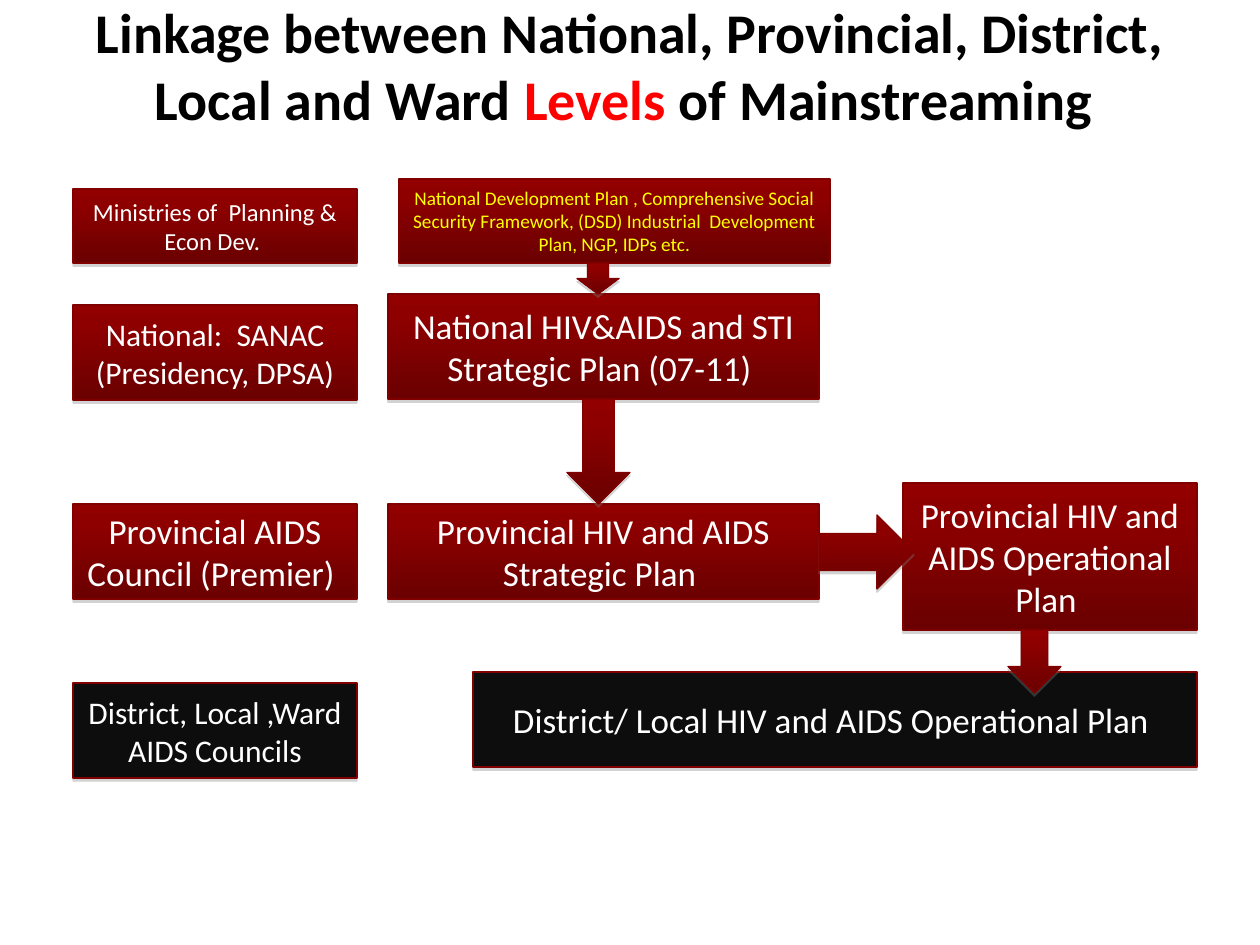
from copy import deepcopy

from lxml import etree
from pptx import Presentation
from pptx.dml.color import RGBColor
from pptx.enum.shapes import MSO_SHAPE
from pptx.enum.text import MSO_ANCHOR, MSO_AUTO_SIZE, PP_ALIGN
from pptx.oxml.ns import qn
from pptx.util import Pt

RECT, DOWN, RIGHT = MSO_SHAPE.RECTANGLE, MSO_SHAPE.DOWN_ARROW, MSO_SHAPE.RIGHT_ARROW
MIDDLE, CENTER = MSO_ANCHOR.MIDDLE, PP_ALIGN.CENTER
BLACK = RGBColor(0x00, 0x00, 0x00)
WHITE = RGBColor(0xFF, 0xFF, 0xFF)
RED = RGBColor(0xFF, 0x00, 0x00)
YELLOW = RGBColor(0xFF, 0xFF, 0x00)
CHARCOAL = RGBColor(0x0D, 0x0D, 0x0D)
MAROON = RGBColor(0x80, 0x00, 0x00)
GRADIENT = [(0, RGBColor(0x92, 0x00, 0x00)), (0.2, RGBColor(0x8E, 0x00, 0x00)),
            (1, RGBColor(0x6B, 0x00, 0x00))]
FONT = "Calibri"
PX = 914400 / 126


def px(*lengths):
    return [round(n * PX) for n in lengths]


def add_part(kind, box, solid=None):
    """Add a maroon-edged shape, with the red gradient unless solid is given."""
    sp = s.shapes.add_shape(kind, *px(*box))
    if solid is not None:
        sp.fill.solid()
        sp.fill.fore_color.rgb = solid
    else:
        sp.fill.gradient()
        sp.fill.gradient_angle = 270
        stops = sp._element.spPr.find(qn("a:gradFill")).find(qn("a:gsLst"))
        stops.insert(1, deepcopy(stops[0]))
        for stop, (position, color) in zip(sp.fill.gradient_stops, GRADIENT):
            stop.position = position
            stop.color.rgb = color
    sp.line.color.rgb = MAROON
    sp.line.width = Pt(0.75)

    # Thin grey shadow below
    sp.shadow.inherit = False
    effects = sp._element.spPr.find(qn("a:effectLst"))
    shadow = etree.SubElement(effects, qn("a:outerShdw"), blurRad="0", dist=str(Pt(1.8)),
                              dir="5400000", rotWithShape="0")
    grey = etree.SubElement(shadow, qn("a:srgbClr"), val="808080")
    etree.SubElement(grey, qn("a:alpha"), val="35000")
    return sp


prs = Presentation()
prs.slide_width, prs.slide_height = px(1260, 945)
s = prs.slides.add_slide(prs.slide_layouts[5])

# Title
title = s.shapes.title
title.left, title.top, title.width, title.height = px(63, 10, 1134, 110)
tf = title.text_frame
tf.word_wrap = True
tf.auto_size = MSO_AUTO_SIZE.NONE
tf.vertical_anchor = MIDDLE
p = tf.paragraphs[0]
p.alignment = CENTER
p.font.name, p.font.size, p.font.bold = FONT, Pt(32), True
for text, color in [
    ("Linkage between National, Provincial, District, Local and Ward ", BLACK),
    ("Levels", RED),
    (" of Mainstreaming ", BLACK),
]:
    r = p.add_run()
    r.text = text
    r.font.color.rgb = color

# Boxes: place, text, size, text colour, solid fill
COUNCIL_X, COUNCIL_W = 73, 284
PLAN_X, PLAN_W = 388, 431
boxes = [
    # Plans
    ((399, 179, PLAN_W, 84), "National Development Plan , Comprehensive Social Security Framework, "
     "(DSD) Industrial  Development Plan, NGP, IDPs etc.", 11, YELLOW, None),
    ((PLAN_X, 294, PLAN_W, 105), "National HIV&AIDS and STI Strategic Plan (07-11) ",
     20, WHITE, None),
    ((PLAN_X, 504, PLAN_W, 95), "Provincial HIV and AIDS Strategic Plan ", 20, WHITE, None),
    ((903, 483, 294, 147), "Provincial HIV and AIDS Operational Plan ", 20, WHITE, None),
    ((473, 672, 724, 95), "District/ Local HIV and AIDS Operational Plan ",
     20, WHITE, CHARCOAL),
    # Councils
    ((COUNCIL_X, 189, COUNCIL_W, 74), "Ministries of  Planning &\nEcon Dev. ", 14, WHITE, None),
    ((COUNCIL_X, 305, COUNCIL_W, 95), "National:  SANAC (Presidency, DPSA)", 18, WHITE, None),
    ((COUNCIL_X, 504, COUNCIL_W, 95), "Provincial AIDS Council (Premier) ", 20, WHITE, None),
    ((COUNCIL_X, 683, COUNCIL_W, 95), "District, Local ,Ward AIDS Councils",
     18, WHITE, CHARCOAL),
]
for box, text, size, color, solid in boxes:
    tf = add_part(RECT, box, solid).text_frame
    tf.word_wrap = True
    tf.vertical_anchor = MIDDLE
    tf.text = text
    for p in tf.paragraphs:
        p.alignment = CENTER
        p.font.name, p.font.size = FONT, Pt(size)
        p.font.color.rgb = color

# Block arrows from plan to plan
for kind, box in [
    (DOWN, (577, 263, 42, 31)),
    (DOWN, (567, 399, 63, 105)),
    (RIGHT, (819, 515, 95, 74)),
    (DOWN, (1008, 630, 53, 63)),
]:
    add_part(kind, box)

prs.save("out.pptx")
